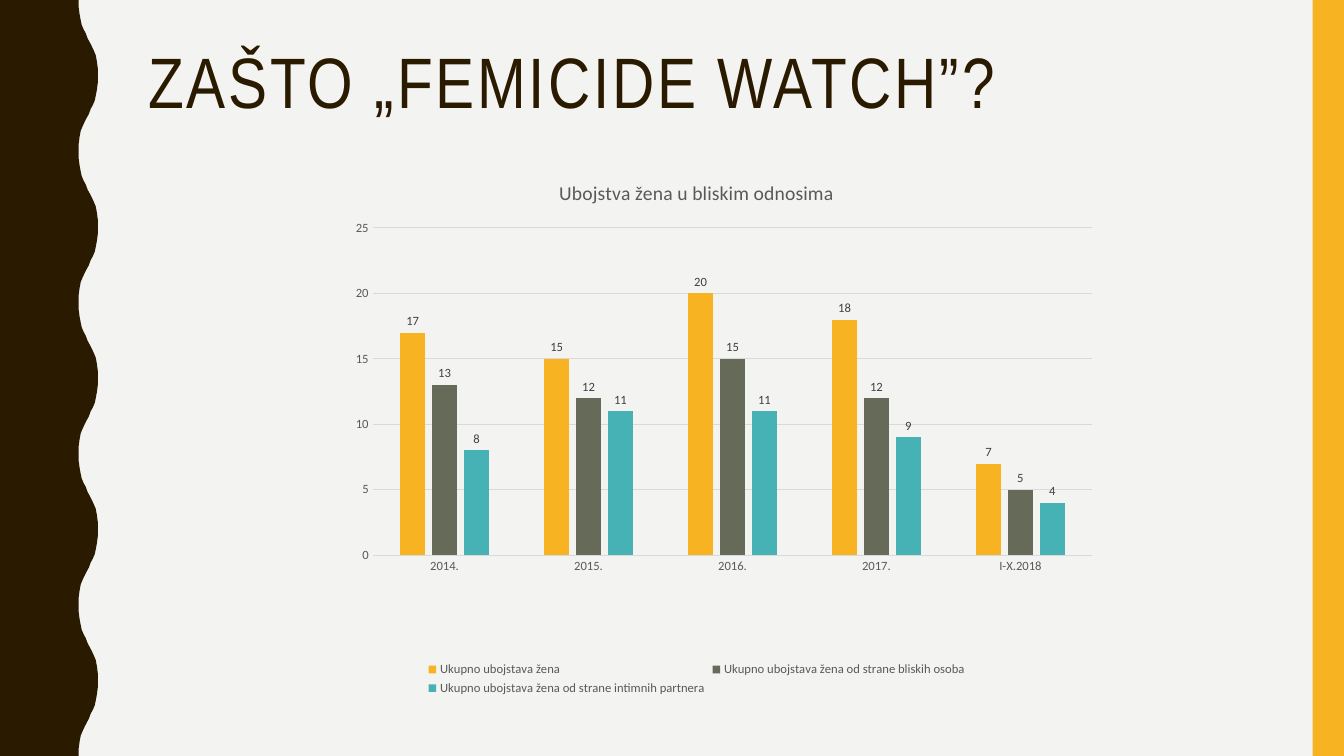
from dataclasses import dataclass

from lxml import etree
from pptx import Presentation
from pptx import util as u
from pptx.chart.data import CategoryChartData
from pptx.dml.color import RGBColor
from pptx.enum import chart as charts, shapes, text
from pptx.oxml import ns


@dataclass(frozen=True)
class Theme:
    paper: str = "F3F3F2"
    brown: str = "2A1A00"
    yellow: str = "F8B323"
    olive: str = "656A59"
    teal: str = "46B2B5"
    axis_text: str = "595959"
    label_text: str = "404040"
    rule: str = "D9D9D9"
    heading_font: str = "Arial Narrow"
    body_font: str = "Calibri"
    heading_size: float = 51
    chart_title_size: float = 14
    chart_size: float = 9
    rule_width: float = 0.75


@dataclass(frozen=True)
class Area:
    """A rectangle in percent of the slide's width and height."""
    left: float
    top: float
    width: float
    height: float

    def place(self) -> tuple[int, int, int, int]:
        return across(self.left), down(self.top), across(self.width), down(self.height)


@dataclass(frozen=True)
class Measure:
    name: str
    values: tuple[int, ...]
    color: str


THEME = Theme()
WIDTH, HEIGHT = u.Inches(13.33), u.Inches(7.5)

TITLE_AREA = Area(10.28, 5.6, 83.5, 21.73)
CHART_AREA = Area(22.36, 21.07, 58.96, 71.47)
BAND_AREA = Area(97.67, 0, 2.33, 100)
PLOT_PERCENT = {"x": 9.1, "y": 12.7, "w": 90.9, "h": 60.6}

TROUGH, CREST, HALF_WAVES = 5.85, 7.28, 10
# Share of the ripple's depth, share of the half wave's length
HALF_WAVE = (
    (0, 0), (0, 0.09), (0.05, 0.19), (0.11, 0.27), (0.16, 0.33),
    (0.26, 0.39), (0.37, 0.44), (0.47, 0.51), (0.58, 0.56), (0.68, 0.61),
    (0.79, 0.67), (0.89, 0.73), (0.95, 0.81), (1, 0.91), (1, 1),
)

YEARS = ("2014.", "2015.", "2016.", "2017.", "I-X.2018")
MEASURES = (
    Measure("Ukupno ubojstava žena", (17, 15, 20, 18, 7), THEME.yellow),
    Measure("Ukupno ubojstava žena od strane bliskih osoba", (13, 12, 15, 12, 5), THEME.olive),
    Measure("Ukupno ubojstava žena od strane intimnih partnera", (8, 11, 11, 9, 4), THEME.teal),
)


def across(percent: float) -> int:
    return round(WIDTH * percent / 100)


def down(percent: float) -> int:
    return round(HEIGHT * percent / 100)


def paint(shape, color: str) -> None:
    shape.shadow.inherit = False
    shape.fill.solid()
    shape.fill.fore_color.rgb = RGBColor.from_string(color)
    shape.line.fill.background()


def style_font(font, name: str, size: float, color: str) -> None:
    font.name = name
    font.size = u.Pt(size)
    font.bold = False
    font.color.rgb = RGBColor.from_string(color)


def style_rule(line) -> None:
    line.color.rgb = RGBColor.from_string(THEME.rule)
    line.width = u.Pt(THEME.rule_width)


def add_wavy_edge(page) -> None:
    points = []
    for half in range(HALF_WAVES):
        for depth, along in HALF_WAVE:
            rising = half % 2 == 0
            share = depth if rising else 1 - depth
            points.append((across(TROUGH + (CREST - TROUGH) * share),
                           down((half + along) * 100 / HALF_WAVES)))
    outline = page.shapes.build_freeform(0, 0)
    outline.add_line_segments([*points, (0, HEIGHT)], close=True)
    paint(outline.convert_to_shape(), THEME.brown)


def add_title(page, words: str) -> None:
    box = page.shapes.add_textbox(*TITLE_AREA.place())
    frame = box.text_frame
    frame.word_wrap = True
    frame.vertical_anchor = text.MSO_ANCHOR.TOP
    para = frame.paragraphs[0]
    para.line_spacing = 0.9
    span = para.add_run()
    span.text = words
    style_font(span.font, THEME.heading_font, THEME.heading_size, THEME.brown)
    span.font._element.set("spc", "200")


def fix_plot_area(chart) -> None:
    """Pin the inner plot area to its share of the chart."""
    plot_area = chart._chartSpace.chart.plotArea
    for layout in plot_area.findall(ns.qn("c:layout")):
        plot_area.remove(layout)
    layout = etree.Element(ns.qn("c:layout"))
    manual = etree.SubElement(layout, ns.qn("c:manualLayout"))
    settings = {"layoutTarget": "inner", "xMode": "edge", "yMode": "edge"}
    settings |= {key: str(percent / 100) for key, percent in PLOT_PERCENT.items()}
    for key, value in settings.items():
        etree.SubElement(manual, ns.qn(f"c:{key}")).set("val", value)
    plot_area.insert(0, layout)


def style_axes(chart) -> None:
    for axis in (chart.category_axis, chart.value_axis):
        axis.major_tick_mark = charts.XL_TICK_MARK.NONE
        axis.minor_tick_mark = charts.XL_TICK_MARK.NONE
        style_font(axis.tick_labels.font, THEME.body_font, THEME.chart_size, THEME.axis_text)
    style_rule(chart.category_axis.format.line)
    values = chart.value_axis
    values.minimum_scale, values.maximum_scale, values.major_unit = 0, 25, 5
    values.format.line.fill.background()
    values.has_major_gridlines = True
    style_rule(values.major_gridlines.format.line)


def style_series(series, color: str) -> None:
    series.format.fill.solid()
    series.format.fill.fore_color.rgb = RGBColor.from_string(color)
    series.invert_if_negative = False
    labels = series.data_labels
    labels.show_value = True
    labels.position = charts.XL_LABEL_POSITION.OUTSIDE_END
    style_font(labels.font, THEME.body_font, THEME.chart_size, THEME.label_text)


def add_chart(page, heading: str) -> None:
    data = CategoryChartData()
    data.categories = YEARS
    for measure in MEASURES:
        data.add_series(measure.name, measure.values)
    kind = charts.XL_CHART_TYPE.COLUMN_CLUSTERED
    chart = page.shapes.add_chart(kind, *CHART_AREA.place(), data).chart
    style_font(chart.font, THEME.body_font, THEME.chart_size, THEME.axis_text)

    chart.has_title = True
    span = chart.chart_title.text_frame.paragraphs[0].add_run()
    span.text = heading
    style_font(span.font, THEME.body_font, THEME.chart_title_size, THEME.axis_text)
    chart.chart_title.include_in_layout = False

    chart.has_legend = True
    chart.legend.position = charts.XL_LEGEND_POSITION.BOTTOM
    chart.legend.include_in_layout = False
    style_font(chart.legend.font, THEME.body_font, THEME.chart_size, THEME.axis_text)

    plot = chart.plots[0]
    plot.vary_by_categories = False
    plot.gap_width, plot.overlap = 219, -27
    for series, measure in zip(plot.series, MEASURES):
        style_series(series, measure.color)
    style_axes(chart)
    fix_plot_area(chart)


def main() -> None:
    deck = Presentation()
    deck.slide_width, deck.slide_height = WIDTH, HEIGHT
    page = deck.slides.add_slide(deck.slide_layouts[6])
    page.background.fill.solid()
    page.background.fill.fore_color.rgb = RGBColor.from_string(THEME.paper)
    add_wavy_edge(page)
    paint(page.shapes.add_shape(shapes.MSO_SHAPE.RECTANGLE, *BAND_AREA.place()), THEME.yellow)
    add_title(page, "ZAŠTO „FEMICIDE WATCH”?")
    add_chart(page, "Ubojstva žena u bliskim odnosima")
    deck.save("out.pptx")


if __name__ == "__main__":
    main()
